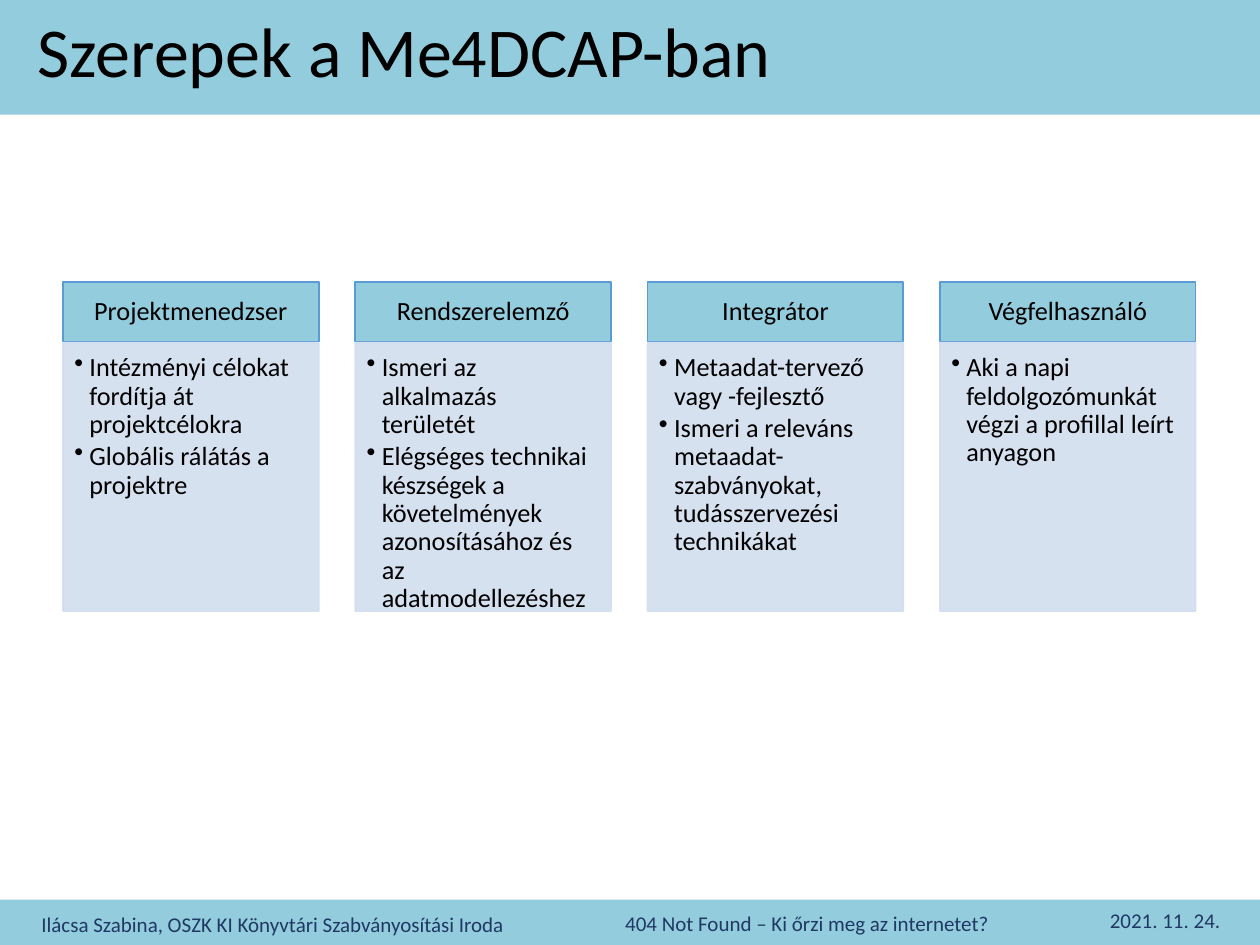
from dataclasses import dataclass

import lxml.etree
import pptx
import pptx.dml.color
import pptx.enum.shapes
import pptx.enum.text
import pptx.oxml.ns
import pptx.util
from pptx.util import Inches

RGBColor = pptx.dml.color.RGBColor
Align = pptx.enum.text.PP_ALIGN
Anchor = pptx.enum.text.MSO_ANCHOR
qn = pptx.oxml.ns.qn


@dataclass(frozen=True)
class Theme:
    band: RGBColor = RGBColor(0x93, 0xCD, 0xDD)
    header_line: RGBColor = RGBColor(0x5B, 0x9B, 0xD5)
    body: RGBColor = RGBColor(0xD2, 0xDE, 0xEF)
    body_opacity: int = 90
    text: RGBColor = RGBColor(0, 0, 0)
    footer: RGBColor = RGBColor(0x20, 0x38, 0x64)
    font: str = "Calibri"
    title_size: int = 40
    role_size: int = 15
    footer_size: int = 12


@dataclass(frozen=True)
class Box:
    left: float
    top: float
    width: float
    height: float

    def lengths(self) -> tuple:
        return tuple(Inches(v) for v in (self.left, self.top, self.width, self.height))


@dataclass(frozen=True)
class Role:
    name: str
    duties: tuple[str, ...]


@dataclass(frozen=True)
class FooterItem:
    text: str
    box: Box
    align: Align


THEME = Theme()
BANDS = (Box(0, -0.03, 10, 0.94), Box(0, 7.14, 10, 0.39))
ROLES = (
    Role("Projektmenedzser", (
        "Intézményi célokat fordítja át projektcélokra",
        "Globális rálátás a projektre",
    )),
    Role("Rendszerelemző", (
        "Ismeri az alkalmazás területét",
        "Elégséges technikai készségek a követelmények azonosításához és az adatmodellezéshez",
    )),
    Role("Integrátor", (
        "Metaadat-tervező vagy -fejlesztő",
        "Ismeri a releváns metaadat-szabványokat, tudásszervezési technikákat",
    )),
    Role("Végfelhasználó", (
        "Aki a napi feldolgozómunkát végzi a profillal leírt anyagon",
    )),
)
FOOTER = (
    FooterItem("404 Not Found – Ki őrzi meg az internetet?", Box(4.1, 7.19, 4.61, 0.27), Align.CENTER),
    FooterItem("Ilácsa Szabina, OSZK KI Könyvtári Szabványosítási Iroda", Box(0.2, 7.2, 3.93, 0.27), Align.CENTER),
    FooterItem("2021. 11. 24.", Box(8.71, 7.17, 1.09, 0.27), Align.LEFT),
)
ROLE_LEFT, ROLE_PITCH, ROLE_WIDTH = 0.5, 2.32, 2.03
HEADER_TOP, HEADER_HEIGHT = 2.24, 0.47
BODY_TOP, BODY_HEIGHT = 2.72, 2.13


def add_rectangle(slide, box: Box, fill: RGBColor, line: RGBColor | None = None):
    rectangle = slide.shapes.add_shape(pptx.enum.shapes.MSO_SHAPE.RECTANGLE, *box.lengths())
    rectangle.shadow.inherit = False
    rectangle.fill.solid()
    rectangle.fill.fore_color.rgb = fill
    if line is None:
        rectangle.line.fill.background()
    else:
        rectangle.line.color.rgb = line
        rectangle.line.width = pptx.util.Pt(1)
    return rectangle


def set_opacity(shape, percent: int) -> None:
    for color in shape.element.spPr.iter(qn("a:srgbClr")):
        lxml.etree.SubElement(color, qn("a:alpha"), val=str(percent * 1000))


def add_bullet(paragraph) -> None:
    properties = paragraph._p.get_or_add_pPr()
    properties.set("marL", str(Inches(0.12)))
    properties.set("indent", str(-Inches(0.12)))
    lxml.etree.SubElement(properties, qn("a:buChar"), char="•")


def format_text(frame, size: int, color: RGBColor, align: Align,
                anchor: Anchor = Anchor.MIDDLE, line_spacing: float = 1.0) -> None:
    frame.word_wrap = True
    frame.vertical_anchor = anchor
    for paragraph in frame.paragraphs:
        paragraph.alignment = align
        paragraph.line_spacing = line_spacing
        for run in paragraph.runs:
            run.font.name = THEME.font
            run.font.size = pptx.util.Pt(size)
            run.font.color.rgb = color


def set_margins(frame, left: float, top: float, right: float, bottom: float) -> None:
    frame.margin_left, frame.margin_top = Inches(left), Inches(top)
    frame.margin_right, frame.margin_bottom = Inches(right), Inches(bottom)


def add_role(slide, role: Role, left: float) -> None:
    header = add_rectangle(slide, Box(left, HEADER_TOP, ROLE_WIDTH, HEADER_HEIGHT),
                           THEME.band, THEME.header_line)
    header.text_frame.text = role.name
    set_margins(header.text_frame, 0.12, 0.07, 0.12, 0.07)
    format_text(header.text_frame, THEME.role_size, THEME.text, Align.CENTER, line_spacing=0.9)

    body = add_rectangle(slide, Box(left, BODY_TOP, ROLE_WIDTH, BODY_HEIGHT), THEME.body, THEME.body)
    set_opacity(body, THEME.body_opacity)
    body.text_frame.text = "\n".join(role.duties)
    set_margins(body.text_frame, 0.09, 0.09, 0.12, 0.13)
    for duty in body.text_frame.paragraphs:
        add_bullet(duty)
        duty.space_after = pptx.util.Pt(0.15 * THEME.role_size)
    format_text(body.text_frame, THEME.role_size, THEME.text, Align.LEFT, Anchor.TOP, 0.9)


def add_footer_item(slide, item: FooterItem) -> None:
    frame = slide.shapes.add_textbox(*item.box.lengths()).text_frame
    frame.text = item.text
    format_text(frame, THEME.footer_size, THEME.footer, item.align)


def place_title(slide, text: str, box: Box) -> None:
    title = slide.shapes.title
    title.left, title.top, title.width, title.height = box.lengths()
    title.text_frame.text = text
    format_text(title.text_frame, THEME.title_size, THEME.text, Align.LEFT, line_spacing=0.9)
    title.element.getparent().append(title.element)


def main() -> None:
    presentation = pptx.Presentation()
    presentation.slide_width, presentation.slide_height = Inches(10), Inches(7.5)
    slide = presentation.slides.add_slide(presentation.slide_layouts[5])
    for band in BANDS:
        add_rectangle(slide, band, THEME.band)
    for column, role in enumerate(ROLES):
        add_role(slide, role, ROLE_LEFT + column * ROLE_PITCH)
    place_title(slide, "Szerepek a Me4DCAP-ban", Box(0.2, 0.14, 7.4, 0.59))
    for item in FOOTER:
        add_footer_item(slide, item)
    presentation.save("out.pptx")


if __name__ == "__main__":
    main()
